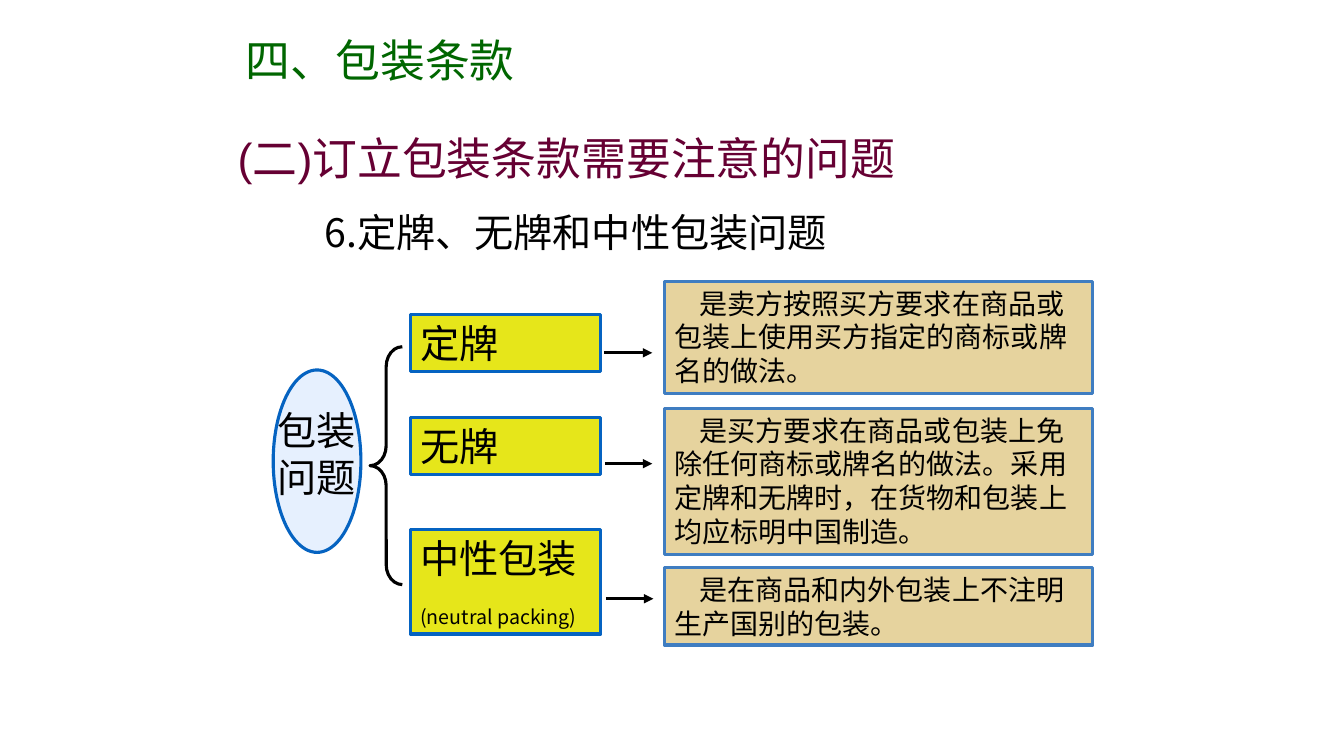
import pptx
import pptx.dml.color
import pptx.enum.shapes
import pptx.enum.text
import pptx.oxml.ns
import pptx.util
from lxml import etree

SHAPES = pptx.enum.shapes.MSO_SHAPE
PX = 9144
BLACK = "000000"
BLUE = "0563C1"
LATIN = "Arial"
CHINESE = "Noto Sans CJK SC"


def px(length):
    return pptx.util.Emu(length * PX)


def colour(value):
    return pptx.dml.color.RGBColor.from_string(value)


class Painter:
    """Draws styled elements on one page, with lengths in hundredths of an inch."""

    def __init__(self, page, line_width=2.25, spacing=1.2):
        self.page = page
        self.line_width = pptx.util.Pt(line_width)
        self.spacing = spacing

    def stroke(self, line, value):
        line.color.rgb = colour(value)
        line.width = self.line_width

    def style(self, span, size, value, font):
        span.font.size = pptx.util.Pt(size)
        span.font.color.rgb = colour(value)
        span.font.name = font

    def label(self, box, text, size, value=BLACK, font=LATIN, indent=0):
        frame = box.text_frame
        frame.text = text
        frame.word_wrap = True
        frame.vertical_anchor = pptx.enum.text.MSO_ANCHOR.TOP
        para = frame.paragraphs[0]
        para.alignment = pptx.enum.text.PP_ALIGN.LEFT
        para.line_spacing = pptx.util.Pt(size * self.spacing)
        if indent:
            properties = para._p.get_or_add_pPr()
            properties.set("marL", "0")
            properties.set("indent", str(px(indent)))
        self.style(para.runs[0], size, value, font)
        return para

    def text(self, place, text, size, value=BLACK, font=LATIN, indent=0):
        box = self.page.shapes.add_textbox(*map(px, place))
        return self.label(box, text, size, value, font, indent)

    def shape(self, kind, place, line, fill=None):
        shape = self.page.shapes.add_shape(kind, *map(px, place))
        shape.shadow.inherit = False
        if fill:
            shape.fill.solid()
            shape.fill.fore_color.rgb = colour(fill)
        else:
            shape.fill.background()
        self.stroke(shape.line, line)
        return shape

    def arrow(self, left, right, y):
        arrow = self.page.shapes.add_connector(
            pptx.enum.shapes.MSO_CONNECTOR.STRAIGHT, px(left), px(y), px(right), px(y))
        self.stroke(arrow.line, BLACK)
        head = etree.SubElement(arrow.line._get_or_add_ln(), pptx.oxml.ns.qn("a:tailEnd"))
        head.set("type", "triangle")
        etree.SubElement(arrow._element.spPr, pptx.oxml.ns.qn("a:effectLst"))


def main():
    deck = pptx.Presentation()
    deck.slide_width, deck.slide_height = px(1333), px(750)
    painter = Painter(deck.slides.add_slide(deck.slide_layouts[6]))

    painter.text((234, 28, 882, 64), "四、包装条款", 32, "006600", CHINESE)
    painter.text((226, 125, 874, 118), "(二)订立包装条款需要注意的问题", 32, "660033")
    painter.text((226, 202, 890, 57), "6.定牌、无牌和中性包装问题", 28, font=CHINESE, indent=86)

    painter.shape(SHAPES.OVAL, (271, 367, 87, 181), BLUE, "E6F0FE")
    painter.text((265, 398, 102, 104), "包装问题", 28)
    brace = painter.shape(SHAPES.LEFT_BRACE, (367, 344, 32, 236), BLACK)
    brace.adjustments[0] = 0.62

    terms = [("定牌", 312, 57), ("无牌", 414, 57), ("中性包装", 525, 104)]
    for term, top, height in terms:
        box = painter.shape(SHAPES.RECTANGLE, (407, top, 189, height), BLUE, "E6E61A")
        para = painter.label(box, term, 28)
    english = para.add_run()
    english.text = "(neutral packing)"
    painter.style(english, 14, BLACK, CHINESE)

    for left, right, y in [(599, 647, 350), (600, 647, 460), (601, 648, 594)]:
        painter.arrow(left, right, y)

    meanings = [
        ("是卖方按照买方要求在商品或包装上使用买方指定的商标或牌名的做法。", 279, 111),
        ("是买方要求在商品或包装上免除任何商标或牌名的做法。"
         "采用定牌和无牌时，在货物和包装上均应标明中国制造。", 405, 145),
        ("是在商品和内外包装上不注明生产国别的包装。", 563, 77),
    ]
    for meaning, top, height in meanings:
        box = painter.shape(SHAPES.RECTANGLE, (659, top, 425, height), "3F7DC1", "E6D39E")
        painter.label(box, meaning, 20, indent=25)

    deck.save("out.pptx")


if __name__ == "__main__":
    main()
